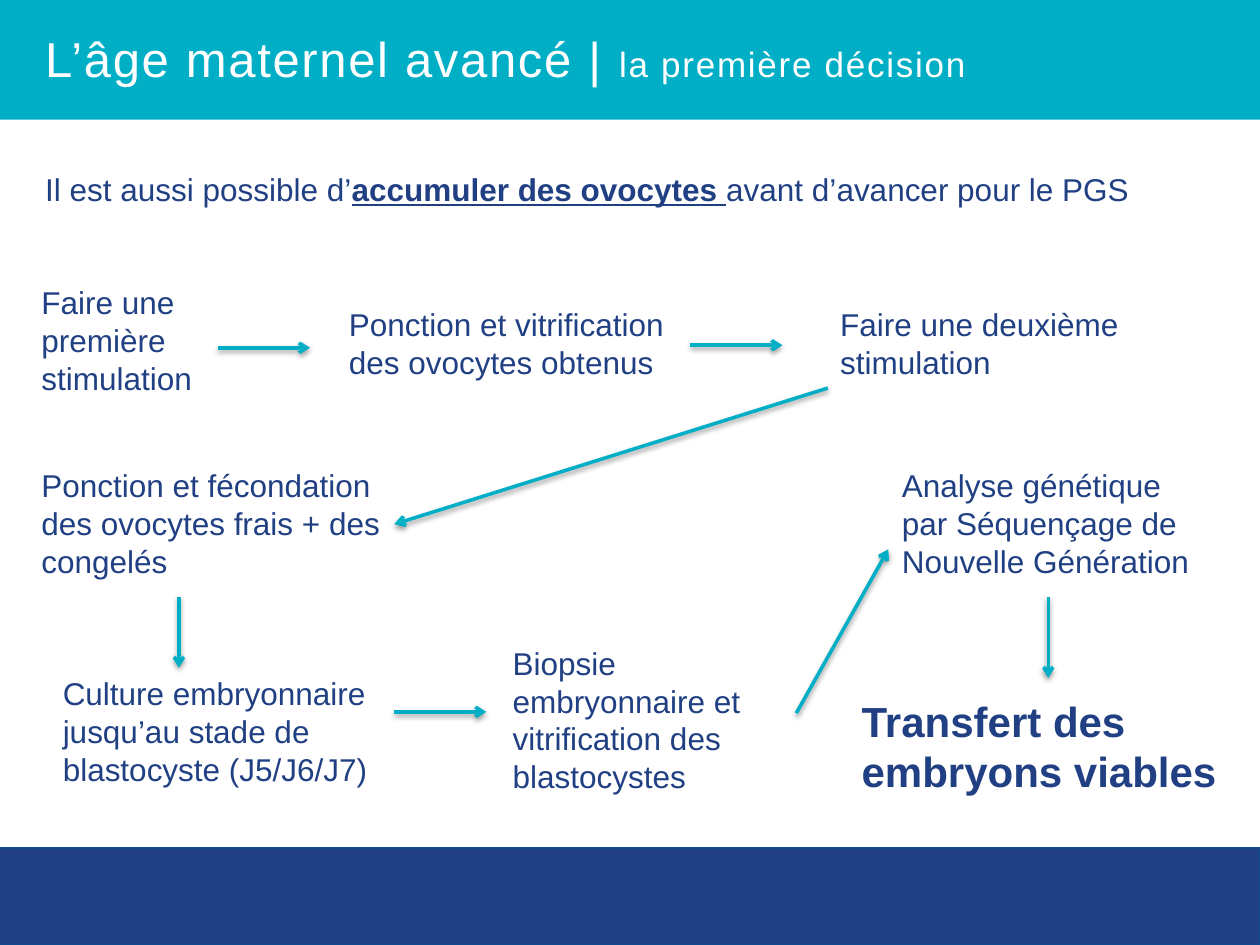
from lxml import etree
from pptx import Presentation
from pptx.dml.color import RGBColor
from pptx.enum.shapes import MSO_CONNECTOR, MSO_SHAPE
from pptx.oxml.ns import qn
from pptx.util import Inches, Pt

LINE = MSO_CONNECTOR.STRAIGHT
RECT = MSO_SHAPE.RECTANGLE
HEX = {"navy": "204083", "edge": "114A8D", "teal": "00AEC6", "white": "FFFFFF", "black": "000000"}

STEPS = [
    (0, 0.9, 1.92, 1.01, "Faire une première stimulation"),
    (2.44, 1.07, 2.77, 0.71, "Ponction et vitrification des ovocytes obtenus"),
    (6.34, 1.07, 2.53, 0.71, "Faire une deuxième stimulation"),
    (0, 2.35, 2.9, 1.01, "Ponction et fécondation des ovocytes frais + des congelés"),
    (0.17, 4, 2.9, 1.01, "Culture embryonnaire jusqu’au stade de blastocyste (J5/J6/J7)"),
    (3.74, 3.76, 2.53, 1.31, "Biopsie embryonnaire et vitrification des blastocystes"),
    (6.83, 2.35, 2.53, 1.01, "Analyse génétique par Séquençage de Nouvelle Génération"),
]
ARROWS = [
    (1.5, 1.46, 2.23, 1.46),
    (5.25, 1.44, 5.98, 1.44),
    (6.34, 1.78, 2.9, 2.86),
    (1.19, 3.44, 1.19, 4),
    (2.9, 4.35, 3.63, 4.35),
    (6.09, 4.36, 6.82, 3.06),
    (8.09, 3.44, 8.09, 4.08),
]


def tint(name):
    return RGBColor.from_string(HEX[name])


def add_band(slide, x, y, w, h, fill, edge=None):
    band = slide.shapes.add_shape(RECT, Inches(x), Inches(y), Inches(w), Inches(h))
    band.shadow.inherit = False
    band.fill.solid()
    band.fill.fore_color.rgb = tint(fill)
    if edge:
        band.line.color.rgb = tint(edge)
        band.line.width = Pt(0.75)
    else:
        band.line.fill.background()


def add_text(slide, x, y, w, h, parts, size=18, color="navy", bold=None):
    box = slide.shapes.add_textbox(Inches(x), Inches(y), Inches(w), Inches(h))
    box.text_frame.word_wrap = True
    para = box.text_frame.paragraphs[0]
    para.font.name = "Arial"
    para.font.size = Pt(size)
    para.font.color.rgb = tint(color)
    para.font.bold = bold
    runs = []
    for part in parts:
        run = para.add_run()
        run.text = part
        runs.append(run)
    return runs


def add_arrow(slide, x1, y1, x2, y2):
    link = slide.shapes.add_connector(LINE, Inches(x1), Inches(y1), Inches(x2), Inches(y2))
    link.line.color.rgb = tint("teal")
    link.line.width = Pt(2)
    props = link._element.spPr
    etree.SubElement(props.find(qn("a:ln")), qn("a:tailEnd"), type="arrow")
    effect = etree.SubElement(props, qn("a:effectLst"))
    shade = etree.SubElement(effect, qn("a:outerShdw"), blurRad=str(Pt(3.1)),
                             dist=str(Pt(1.6)), dir="5400000", rotWithShape="0")
    color = etree.SubElement(shade, qn("a:srgbClr"), val=HEX["black"])
    etree.SubElement(color, qn("a:alpha"), val="38000")


def add_header(slide, x, y, w, h):
    add_band(slide, x, y, w, h, "teal")
    runs = add_text(slide, x + 0.26, y + 0.18, w - 0.26, 0.57,
                    ["L’âge maternel avancé | ", "la première décision"], 28, "white")
    runs[1].font.size = Pt(20)
    for run in runs:
        run.font._element.set("spc", "100")


def add_intro(slide, x, y, w, h):
    runs = add_text(slide, x, y, w, h, ["Il est aussi possible d’", "accumuler des ovocytes ",
                                        "avant d’avancer pour le PGS"])
    runs[1].font.bold = True
    runs[1].font.underline = True


def add_flow(slide, x, y):
    for left, top, w, h, text in STEPS:
        add_text(slide, x + left, y + top, w, h, [text])
    add_text(slide, x + 6.51, y + 4.17, 3.11, 0.91, ["Transfert des embryons viables"], 24, bold=True)
    for x1, y1, x2, y2 in ARROWS:
        add_arrow(slide, x + x1, y + y1, x + x2, y + y2)


def main():
    deck = Presentation()
    deck.slide_width = Inches(10)
    deck.slide_height = Inches(7.5)
    slide = deck.slides.add_slide(deck.slide_layouts[6])
    add_band(slide, -0.01, 6.73, 10.01, 0.77, "navy", "edge")
    add_intro(slide, 0.26, 1.3, 9.32, 0.4)
    add_flow(slide, 0.23, 1.3)
    add_header(slide, 0, 0, 10, 0.95)
    deck.save("out.pptx")


if __name__ == "__main__":
    main()
